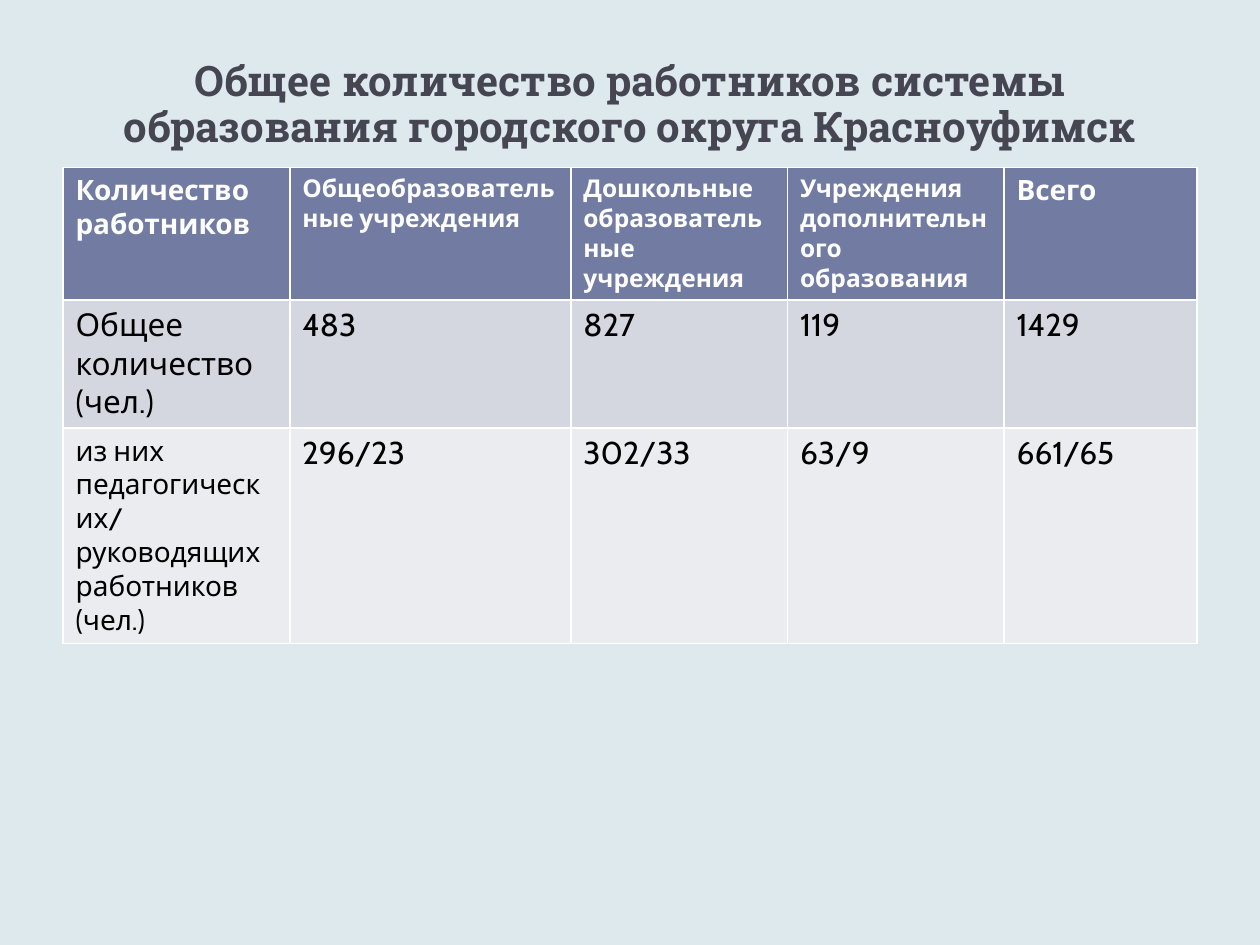
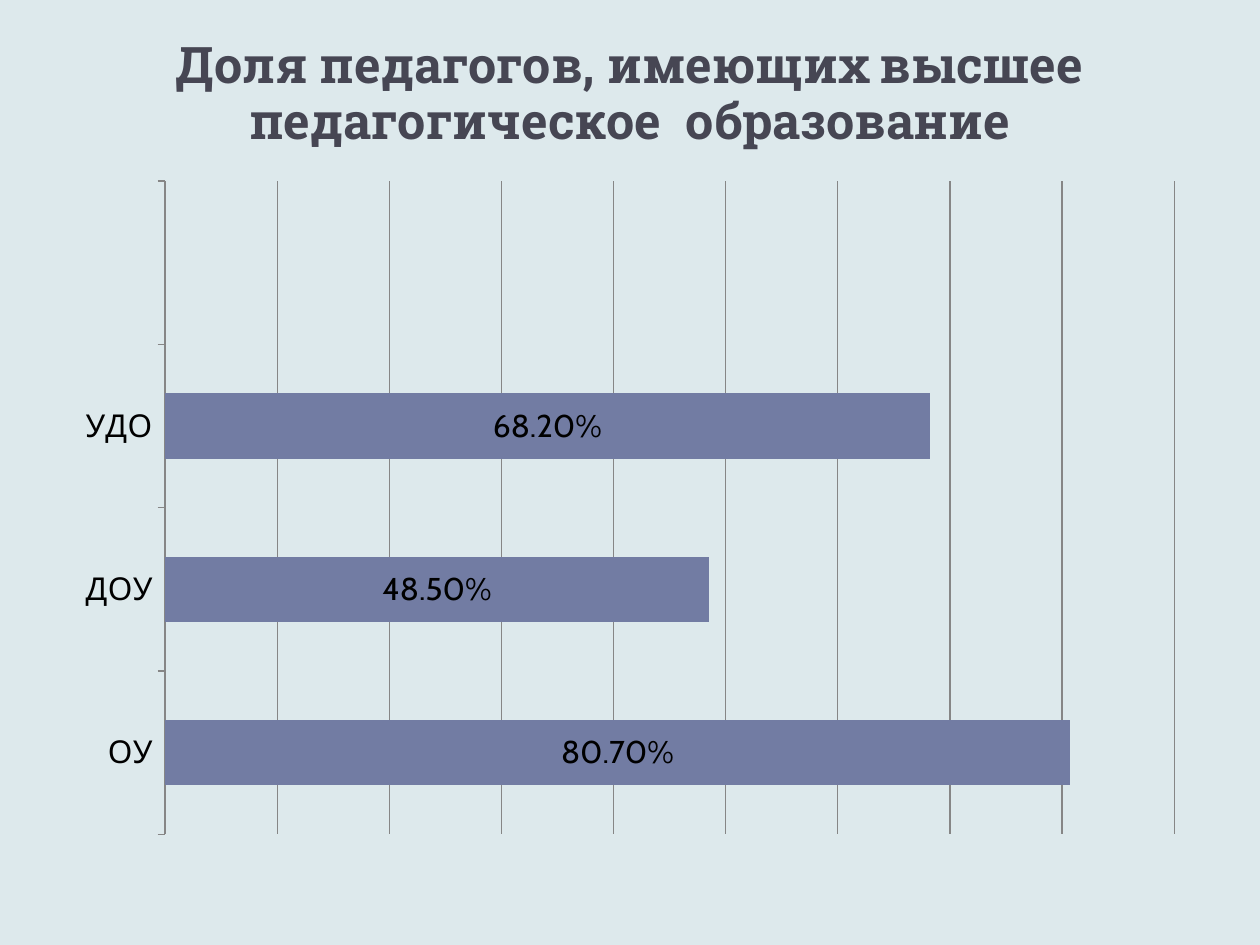
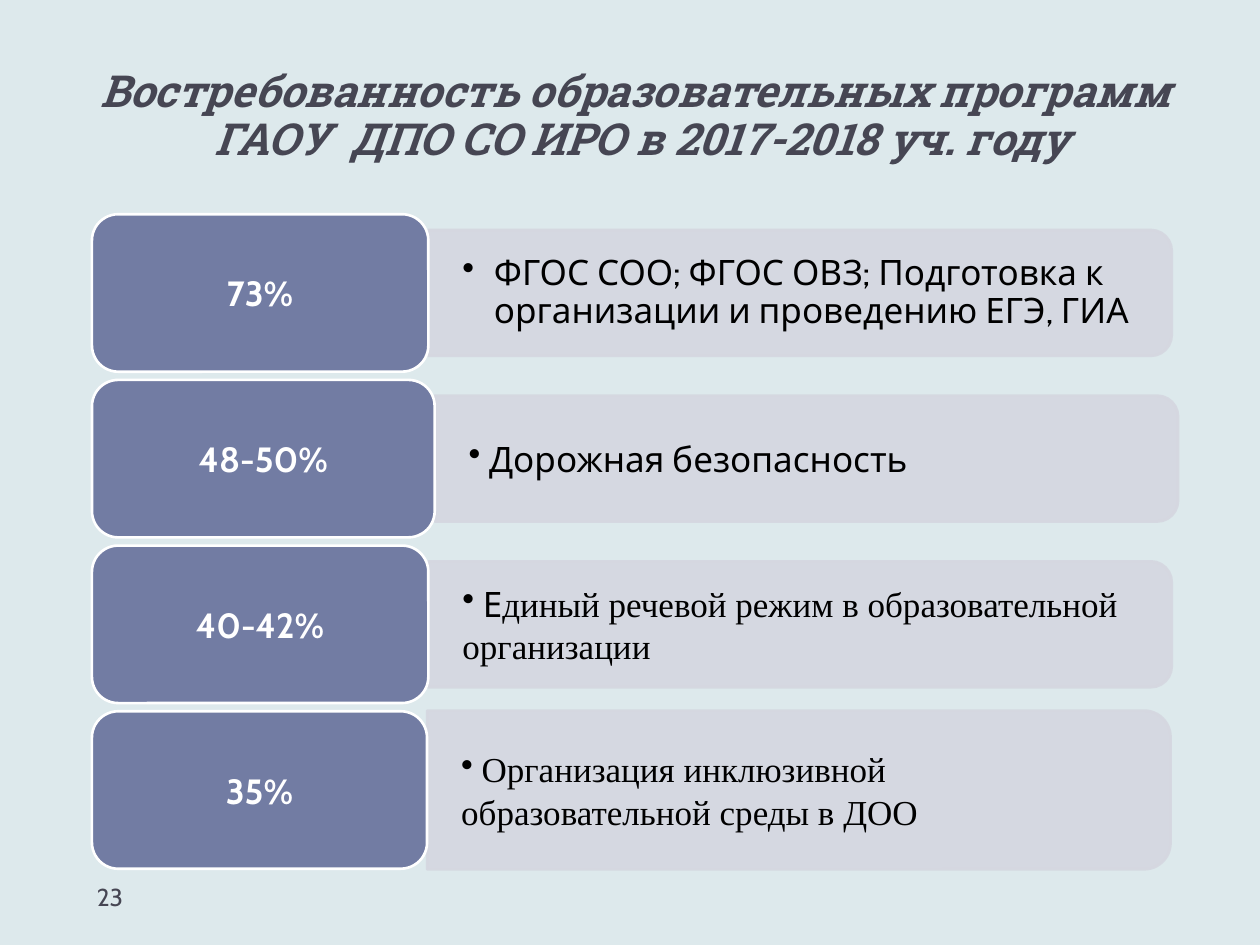
"""Build three slides on the teaching staff of a town district."""
from lxml import etree
from pptx import Presentation
from pptx.chart.data import CategoryChartData
from pptx.dml.color import RGBColor
from pptx.enum.chart import XL_CHART_TYPE, XL_LABEL_POSITION, XL_TICK_MARK
from pptx.enum.shapes import MSO_SHAPE
from pptx.enum.text import MSO_ANCHOR, MSO_AUTO_SIZE, PP_ALIGN
from pptx.oxml.ns import qn
from pptx.util import Inches, Pt

BACK = RGBColor(0xDD, 0xE9, 0xEC)
INK = RGBColor(0x46, 0x46, 0x53)
BLUE = RGBColor(0x72, 0x7C, 0xA3)
PALE = RGBColor(0xD5, 0xD7, 0xE0)
LIGHT = RGBColor(0xEB, 0xEC, 0xF0)
GREY = RGBColor(0x86, 0x86, 0x86)
WHITE = RGBColor(0xFF, 0xFF, 0xFF)
BLACK = RGBColor(0, 0, 0)
HEAD, BODY, SERIF = "Roboto Slab", "Cabin", "Times New Roman"
STACKED = XL_CHART_TYPE.BAR_STACKED
CENTER = XL_LABEL_POSITION.CENTER
OUT, NONE = XL_TICK_MARK.OUTSIDE, XL_TICK_MARK.NONE
ROUND, TAB = MSO_SHAPE.ROUNDED_RECTANGLE, MSO_SHAPE.ROUND_2_SAME_RECTANGLE
LOW, MID = MSO_ANCHOR.BOTTOM, MSO_ANCHOR.MIDDLE
MIDDLE = PP_ALIGN.CENTER
FIXED = MSO_AUTO_SIZE.NONE
LEFT, TOP, WIDE = 0.5, 1.33, 9

prs = Presentation()
prs.slide_width, prs.slide_height = Inches(10), Inches(7.5)
back = prs.slide_master.background.fill
back.solid()
back.fore_color.rgb = BACK


def add_run(para, text, size, color, face=BODY, bold=False, italic=False):
    run = para.add_run()
    run.text = text
    font = run.font
    font.size, font.name, font.bold, font.italic = Pt(size), face, bold, italic
    font.color.rgb = color


def add_slide(lines, size, box, space, italic=False):
    slide = prs.slides.add_slide(prs.slide_layouts[5])
    title = slide.shapes.title
    title.left, title.top, title.width, title.height = map(Inches, box)
    frame = title.text_frame
    frame.auto_size, frame.vertical_anchor = FIXED, LOW
    para = frame.paragraphs[0]
    para.alignment, para.line_spacing = MIDDLE, space
    for i, line in enumerate(lines):
        if i:
            para.add_line_break()
        add_run(para, line, size, INK, HEAD, True, italic)
    return slide


slide = add_slide(
    ["Общее количество работников системы образования городского округа Красноуфимск"],
    24, (LEFT, 0.17, WIDE, 1.08), 0.9)
rows = [
    ("Количество работников", "Общеобразовательные учреждения",
     "Дошкольные образовательные учреждения",
     "Учреждения дополнительного образования", "Всего"),
    ("Общее количество (чел.)", "483", "827", "119", "1429"),
    ("из них педагогических/ руководящих работников (чел.)",
     "296/23", "302/33", "63/9", "661/65"),
]
sizes = [(16, 14, 14, 14, 16), (18,) * 5, (16, 18, 18, 18, 18)]
table = slide.shapes.add_table(
    3, 5, Inches(LEFT), Inches(TOP), Inches(WIDE), Inches(3.48)).table
for col, width in zip(table.columns, (1.8, 2.23, 1.72, 1.72, 1.53)):
    col.width = Inches(width)
for row, height in zip(table.rows, (1.05, 0.94, 1.49)):
    row.height = Inches(height)
for r, fill in enumerate((BLUE, PALE, LIGHT)):
    for c, text in enumerate(rows[r]):
        cell = table.cell(r, c)
        cell.fill.solid()
        cell.fill.fore_color.rgb = fill
        add_run(cell.text_frame.paragraphs[0], text, sizes[r][c],
                BLACK if r else WHITE, bold=r == 0)

slide = add_slide(["Доля педагогов, имеющих высшее педагогическое  образование"],
                  28.8, (LEFT, 0.17, WIDE, 1.08), 0.93)
data = CategoryChartData(number_format="0.00%")
data.categories = ["ОУ", "ДОУ", "УДО", ""]
data.add_series("Series 1", (0.807, 0.485, 0.682, None))
chart = slide.shapes.add_chart(
    STACKED, Inches(LEFT), Inches(TOP), Inches(WIDE), Inches(5.4), data).chart
chart.has_title = chart.has_legend = False
chart.font.size, chart.font.name = Pt(18), BODY
chart.font.color.rgb = BLACK
plot = chart.plots[0]
plot.gap_width, plot.overlap, plot.vary_by_categories = 150, 100, False
bars = plot.series[0].format.fill
bars.solid()
bars.fore_color.rgb = BLUE
plot.has_data_labels = True
labels = plot.data_labels
labels.show_value, labels.position = True, CENTER
labels.number_format, labels.number_format_is_linked = "0.00%", False
names, scale = chart.category_axis, chart.value_axis
names.major_tick_mark, names.minor_tick_mark = OUT, NONE
names.format.line.color.rgb = GREY
scale.visible, scale.has_major_gridlines = False, True
scale.minimum_scale, scale.maximum_scale, scale.major_unit = 0, 0.9, 0.1
scale.major_gridlines.format.line.color.rgb = GREY

slide = add_slide(["Востребованность образовательных программ ",
                   "ГАОУ  ДПО СО ИРО в 2017-2018 уч. году"],
                  25.2, (0.59, 0.21, WIDE, 1.15), 0.9, True)
page = slide.shapes.add_textbox(Inches(0.67), Inches(6.95), Inches(2.17), Inches(0.4))
add_run(page.text_frame.paragraphs[0], "23", 14, INK)

EDGE, FIRST, STEP, HIGH, LONG = 0.73, 1.7, 1.315, 1.25, 5.9
items = [
    ("73%", 2.67, 1, 0.9, 0.25,
     [("ФГОС СОО; ФГОС ОВЗ; Подготовка к организации и проведению ЕГЭ, ГИА", BODY)]),
    ("48-50%", 2.72, 1, 0.9, 0, [(" Дорожная безопасность", BODY)]),
    ("40-42%", 2.67, 1, 0.9, 0,
     [(" Е", BODY), ("диный речевой режим в образовательной организации", SERIF)]),
    ("35%", 2.66, 1.26, 1.13, 0,
     [(" ", BODY), ("Организация инклюзивной образовательной среды в ДОО", SERIF)]),
]
for i, (share, width, thick, tall, hang, parts) in enumerate(items):
    top = FIRST + i * STEP
    mid, start = top + HIGH / 2, EDGE + width

    bar = slide.shapes.add_shape(
        TAB, Inches(start + (LONG - thick) / 2), Inches(mid - LONG / 2),
        Inches(thick), Inches(LONG))
    bar.rotation = 90
    tag = slide.shapes.add_shape(
        ROUND, Inches(EDGE), Inches(top), Inches(width), Inches(HIGH))
    for shape, fill, line in ((bar, PALE, PALE), (tag, BLUE, WHITE)):
        shape.shadow.inherit = False
        shape.fill.solid()
        shape.fill.fore_color.rgb = fill
        shape.line.color.rgb = line
        shape.line.width = Pt(1.5)
    for color in bar._element.spPr.iter(qn("a:srgbClr")):
        etree.SubElement(color, qn("a:alpha"), val="90000")

    frame = tag.text_frame
    frame.word_wrap, frame.vertical_anchor = True, MID
    para = frame.paragraphs[0]
    para.alignment = MIDDLE
    add_run(para, share, 20, WHITE, bold=True)

    note = slide.shapes.add_textbox(
        Inches(start), Inches(mid - tall / 2), Inches(5.85), Inches(tall))
    frame = note.text_frame
    frame.word_wrap, frame.vertical_anchor = True, MID
    frame.margin_left = frame.margin_right = Inches(0.27)
    frame.margin_top = frame.margin_bottom = Inches(0.14)
    para = frame.paragraphs[0]
    props = para._p.get_or_add_pPr()
    props.set("marL", str(Inches(hang)))
    props.set("indent", str(-Inches(hang)))
    etree.SubElement(props, qn("a:buChar"), char="•")
    if hang:
        para.line_spacing = 0.9
    for text, face in parts:
        add_run(para, text, 20, BLACK, face)

prs.save("out.pptx")
